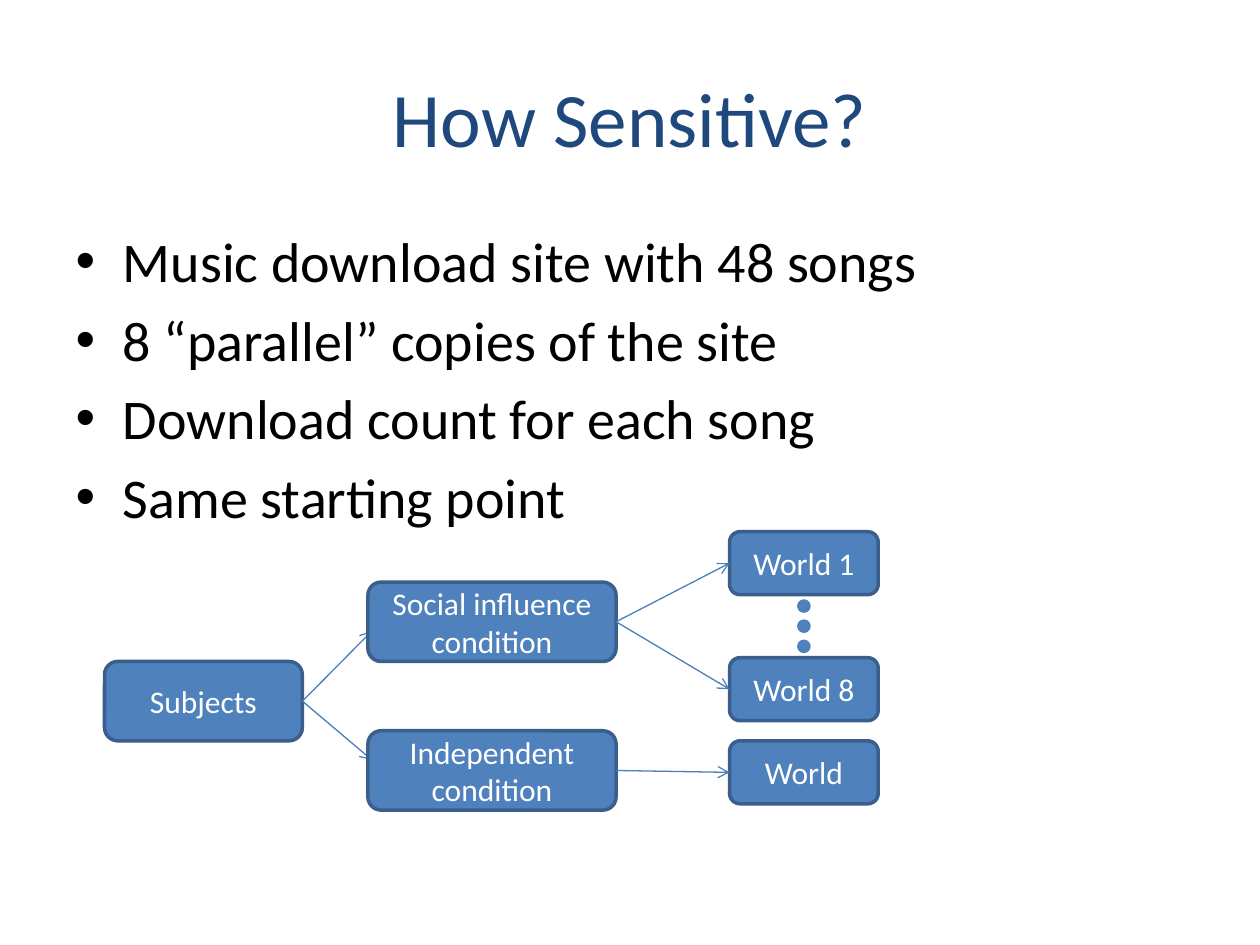
from lxml.etree import SubElement
from pptx import Presentation
from pptx.dml.color import RGBColor
from pptx.enum.shapes import MSO_CONNECTOR as LINK, MSO_SHAPE as SHAPE
from pptx.enum.text import MSO_ANCHOR as ANCHOR, PP_ALIGN as ALIGN
from pptx.oxml.ns import qn
from pptx.util import Inches, Pt

COLORS = {"title": "1F497D", "text": "000000", "fill": "4F81BD",
          "edge": "3A5F8C", "arrow": "4B7EBC", "label": "FFFFFF"}
COLUMNS, ROWS = 100, 75
LEFT, RIGHT = 1, 3


class SlideBuilder:
    """Draws styled elements on one slide, placed in grid columns and rows."""

    font = "Calibri"

    def __init__(self, deck):
        self.page = deck.slides.add_slide(deck.slide_layouts[1])
        self.column = deck.slide_width / COLUMNS
        self.row = deck.slide_height / ROWS

    def color(self, name):
        return RGBColor.from_string(COLORS[name])

    def x(self, columns):
        return round(columns * self.column)

    def y(self, rows):
        return round(rows * self.row)

    def area(self, left, top, width, height):
        return self.x(left), self.y(top), self.x(width), self.y(height)

    def add_text(self, para, text, size, color):
        span = para.add_run()
        span.text = text
        span.font.name, span.font.size = self.font, Pt(size)
        span.font.color.rgb = self.color(color)

    def place(self, holder, area):
        holder.left, holder.top, holder.width, holder.height = self.area(*area)
        return holder.text_frame

    def title(self, text, area):
        frame = self.place(self.page.shapes.title, area)
        frame.vertical_anchor = ANCHOR.MIDDLE
        frame.paragraphs[0].alignment = ALIGN.CENTER
        self.add_text(frame.paragraphs[0], text, 44, "title")

    def bullets(self, items, area):
        frame = self.place(self.page.placeholders[1], area)
        for index, item in enumerate(items):
            para = frame.add_paragraph() if index else frame.paragraphs[0]
            self.add_text(para, item, 32, "text")

    def shape(self, kind, area, edge):
        shape = self.page.shapes.add_shape(kind, *self.area(*area))
        shape.shadow.inherit = False
        shape.fill.solid()
        shape.fill.fore_color.rgb = self.color("fill")
        shape.line.color.rgb = self.color(edge)
        shape.line.width = Pt(2)
        return shape

    def box(self, text, area):
        box = self.shape(SHAPE.ROUNDED_RECTANGLE, area, "edge")
        frame = box.text_frame
        frame.word_wrap = True
        frame.vertical_anchor = ANCHOR.MIDDLE
        frame.paragraphs[0].alignment = ALIGN.CENTER
        self.add_text(frame.paragraphs[0], text, 18, "label")
        return box

    def dot(self, left, top, size):
        self.shape(SHAPE.OVAL, (left, top, size, size), "fill")

    def arrow(self, source, target=None, tip=(0, 0)):
        arrow = self.page.shapes.add_connector(LINK.STRAIGHT, 0, 0, self.x(tip[0]), self.y(tip[1]))
        arrow.begin_connect(source, RIGHT)
        if target is not None:
            arrow.end_connect(target, LEFT)
        arrow.line.color.rgb = self.color("arrow")
        arrow.line.width = Pt(0.75)
        properties = arrow._element.spPr
        SubElement(properties.find(qn("a:ln")), qn("a:tailEnd"), type="arrow")
        SubElement(properties, qn("a:effectLst"))


def main():
    deck = Presentation()
    deck.slide_width, deck.slide_height = Inches(10), Inches(7.5)
    slide = SlideBuilder(deck)
    slide.title("How Sensitive?", (5, 3, 90, 12.5))
    slide.bullets(["Music download site with 48 songs", "8 “parallel” copies of the site",
                   "Download count for each song", "Same starting point"], (5, 17.5, 90, 49.5))

    subjects = slide.box("Subjects", (8.3, 52.5, 15.7, 6.3))
    for tip_row in (50.1, 60.3):
        slide.arrow(subjects, tip=(29.5, tip_row))
    social, independent = [slide.box(f"{name} condition", (29.2, top, 19.7, 6.3))
                           for name, top in (("Social influence", 46.2), ("Independent", 58))]
    first, eighth, single = [slide.box(name, (57.9, top, 11.8, 5))
                             for name, top in (("World 1", 42.2), ("World 8", 52.2), ("World", 58.8))]
    for source, target in ((social, eighth), (social, first), (independent, single)):
        slide.arrow(source, target)
    for index in range(3):
        slide.dot(63.4, 47.7 + 1.6 * index, 0.8)
    deck.save("out.pptx")


if __name__ == "__main__":
    main()
